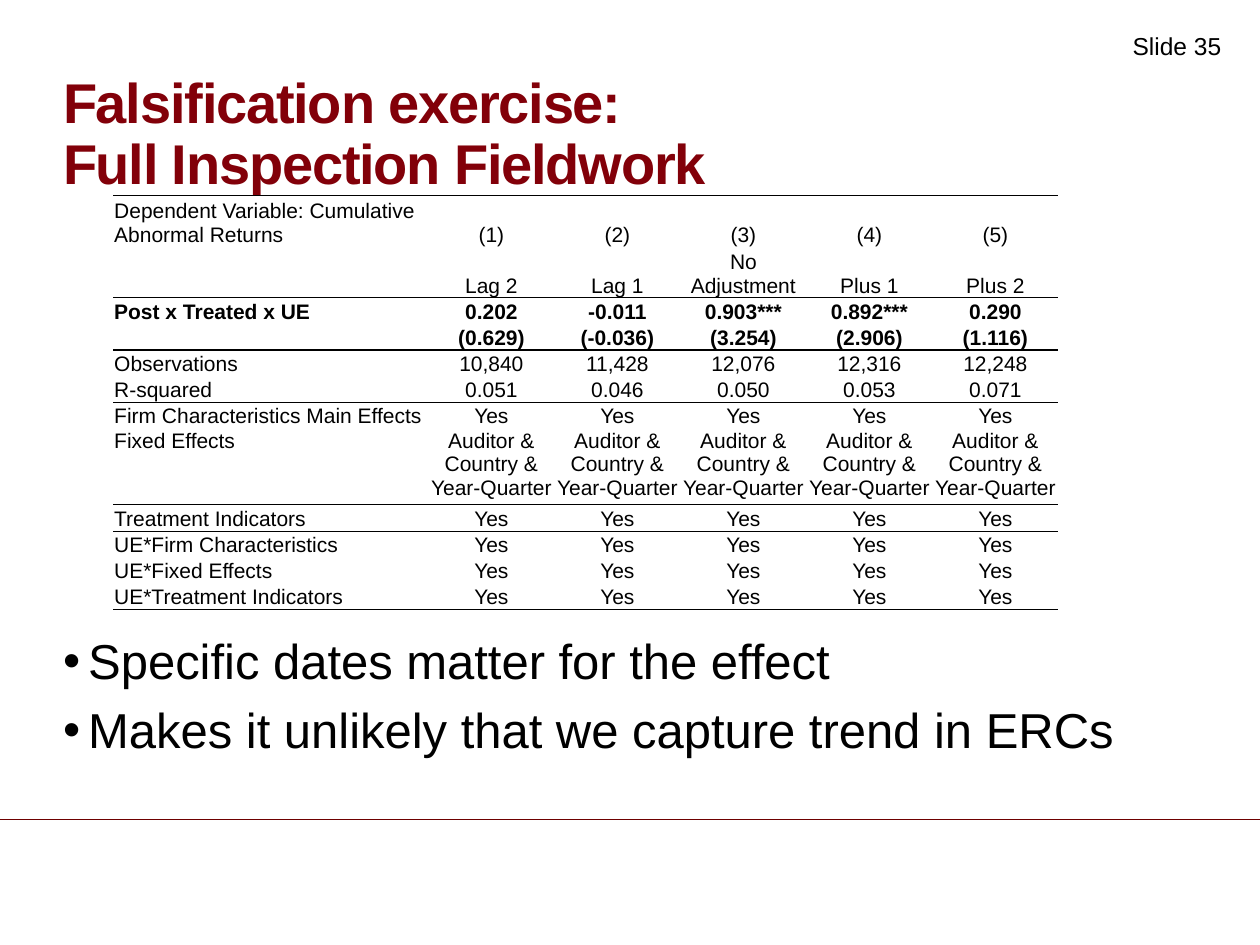
from lxml import etree
from pptx import Presentation
from pptx.dml.color import RGBColor
from pptx.enum.shapes import MSO_CONNECTOR
from pptx.enum.text import MSO_ANCHOR, MSO_AUTO_SIZE, PP_ALIGN
from pptx.oxml.ns import qn
from pptx.util import Inches, Pt

TOP, BOTTOM = MSO_ANCHOR.TOP, MSO_ANCHOR.BOTTOM
LEFT, CENTER = PP_ALIGN.LEFT, PP_ALIGN.CENTER
STRAIGHT = MSO_CONNECTOR.STRAIGHT
NO_FIT = MSO_AUTO_SIZE.NONE

FONT = "Arial"
COLORS = {"title": "820009", "text": "000000", "rule": "6E0000"}
COLUMNS, ROWS = 20, 15
NO_STYLE = "{2D5ABB26-0587-4C30-8999-92F81FD0307C}"

YES = ["Yes"] * 5
RESULTS = [
    ["Dependent Variable: Cumulative Abnormal Returns"] + [f"({n})" for n in range(1, 6)],
    ["", "Lag 2", "Lag 1", "No\nAdjustment", "Plus 1", "Plus 2"],
    ["Post x Treated x UE", "0.202", "-0.011", "0.903***", "0.892***", "0.290"],
    ["", "(0.629)", "(-0.036)", "(3.254)", "(2.906)", "(1.116)"],
    ["Observations", "10,840", "11,428", "12,076", "12,316", "12,248"],
    ["R-squared", "0.051", "0.046", "0.050", "0.053", "0.071"],
    ["Firm Characteristics Main Effects"] + YES,
    ["Fixed Effects"] + ["Auditor & Country & Year-Quarter"] * 5,
    ["Treatment Indicators"] + YES,
    ["UE*Firm Characteristics"] + YES,
    ["UE*Fixed Effects"] + YES,
    ["UE*Treatment Indicators"] + YES,
]
LINES_IN_ROW = {0: 2, 1: 2, 7: 3}
RULES_ABOVE = {0: 0.5, 2: 0.5, 4: 1, 6: 0.5, 8: 0.5, 9: 0.5, 12: 0.5}
BOLD_ROWS = {2, 3}
TOP_ROWS = {7}


class SlideBuilder:
    def __init__(self, prs):
        self.prs = prs
        self.s = prs.slides.add_slide(prs.slide_layouts[1])
        self.col = prs.slide_width / COLUMNS
        self.row = prs.slide_height / ROWS

    def box(self, x, y, w, h):
        return (round(x * self.col), round(y * self.row),
                round(w * self.col), round(h * self.row))

    def place(self, sp, box):
        sp.left, sp.top, sp.width, sp.height = self.box(*box)

    def run(self, p, text, size, color="text", bold=False):
        r = p.add_run()
        r.text = text
        r.font.name = FONT
        r.font.size = Pt(size)
        r.font.bold = bold
        r.font.color.rgb = RGBColor.from_string(COLORS[color])
        return r

    def frame(self, sp, anchor):
        tf = sp.text_frame
        tf.word_wrap = True
        tf.auto_size = NO_FIT
        tf.vertical_anchor = anchor
        tf.margin_left = tf.margin_right = tf.margin_top = tf.margin_bottom = 0
        return tf

    def title(self, lines, box):
        sp = self.s.shapes.title
        self.place(sp, box)
        p = self.frame(sp, BOTTOM).paragraphs[0]
        p.alignment = LEFT
        p.line_spacing = 0.9
        for i, line in enumerate(lines):
            if i:
                p.add_line_break()
            r = self.run(p, line, 32, "title", True)
            r.font._element.set("spc", "-70")

    def bullets(self, items, box):
        sp = self.s.placeholders[1]
        self.place(sp, box)
        tf = self.frame(sp, TOP)
        for i, item in enumerate(items):
            p = tf.add_paragraph() if i else tf.paragraphs[0]
            p.line_spacing = 0.9
            p.space_before = Pt(9 if i else 0)
            pPr = p._p.get_or_add_pPr()
            pPr.set("marL", str(Inches(0.2)))
            pPr.set("indent", str(-Inches(0.2)))
            clr = etree.SubElement(pPr, qn("a:buClr"))
            etree.SubElement(clr, qn("a:srgbClr"), val=COLORS["text"])
            etree.SubElement(pPr, qn("a:buFont"), typeface=FONT)
            etree.SubElement(pPr, qn("a:buChar"), char="•")
            self.run(p, item, 28)

    def label(self, text, size, box):
        tf = self.s.shapes.add_textbox(*self.box(*box)).text_frame
        tf.word_wrap = True
        self.run(tf.paragraphs[0], text, size)

    def rule(self, y, width):
        x, y, w, _ = self.box(0, y, COLUMNS, 0)
        line = self.s.shapes.add_connector(STRAIGHT, x, y, x + w, y)
        line.line.color.rgb = RGBColor.from_string(COLORS["rule"])
        line.line.width = Pt(width)
        etree.SubElement(line._element.spPr, qn("a:effectLst"))

    def border(self, cell, side, width):
        ln = etree.SubElement(cell._tc.get_or_add_tcPr(), qn("a:" + side))
        if width:
            ln.set("w", str(Pt(width)))
            fill = etree.SubElement(ln, qn("a:solidFill"))
            etree.SubElement(fill, qn("a:srgbClr"), val=COLORS["text"])
        else:
            etree.SubElement(ln, qn("a:noFill"))

    def cell(self, cell, text, align, anchor, bold, above, below):
        cell.margin_left = cell.margin_right = cell.margin_top = Pt(0.5)
        cell.margin_bottom = 0
        cell.vertical_anchor = anchor
        tf = cell.text_frame
        for i, line in enumerate(text.split("\n")):
            p = tf.add_paragraph() if i else tf.paragraphs[0]
            p.alignment = align
            if line:
                self.run(p, line, 12, bold=bold)
            else:
                etree.SubElement(p._p, qn("a:endParaRPr"), sz="1200")
        self.border(cell, "lnT", above)
        self.border(cell, "lnB", below)
        cell.fill.background()

    def table(self, rows, widths, line_height, x, y):
        heights = [LINES_IN_ROW.get(i, 1) * line_height for i in range(len(rows))]
        box = self.box(x, y, sum(widths), sum(heights))
        table = self.s.shapes.add_table(len(rows), len(widths), *box).table
        table.first_row = table.horz_banding = False
        table._tbl.tblPr.find(qn("a:tableStyleId")).text = NO_STYLE
        for column, width in zip(table.columns, widths):
            column.width = round(width * self.col)
        for i, row in enumerate(rows):
            table.rows[i].height = round(heights[i] * self.row)
            for j, text in enumerate(row):
                self.cell(table.cell(i, j), text, CENTER if j else LEFT,
                          TOP if i in TOP_ROWS else BOTTOM, i in BOLD_ROWS,
                          RULES_ABOVE.get(i), RULES_ABOVE.get(i + 1))


def main():
    prs = Presentation()
    prs.slide_width, prs.slide_height = Inches(10), Inches(7.5)
    b = SlideBuilder(prs)
    b.rule(13, 0.25)
    b.label("Slide 35", 14, (17.78, 0.39, 2.22, 1.03))
    b.title(["Falsification exercise:", "Full Inspection Fieldwork"], (1, 0.58, 18, 2.54))
    b.bullets(["Specific dates matter for the effect",
               "Makes it unlikely that we capture trend in ERCs"], (1, 10.12, 18, 2.52))
    b.table(RESULTS, [5] + [2] * 5, 0.38, 1.8, 3.1)
    prs.save("out.pptx")


if __name__ == "__main__":
    main()
